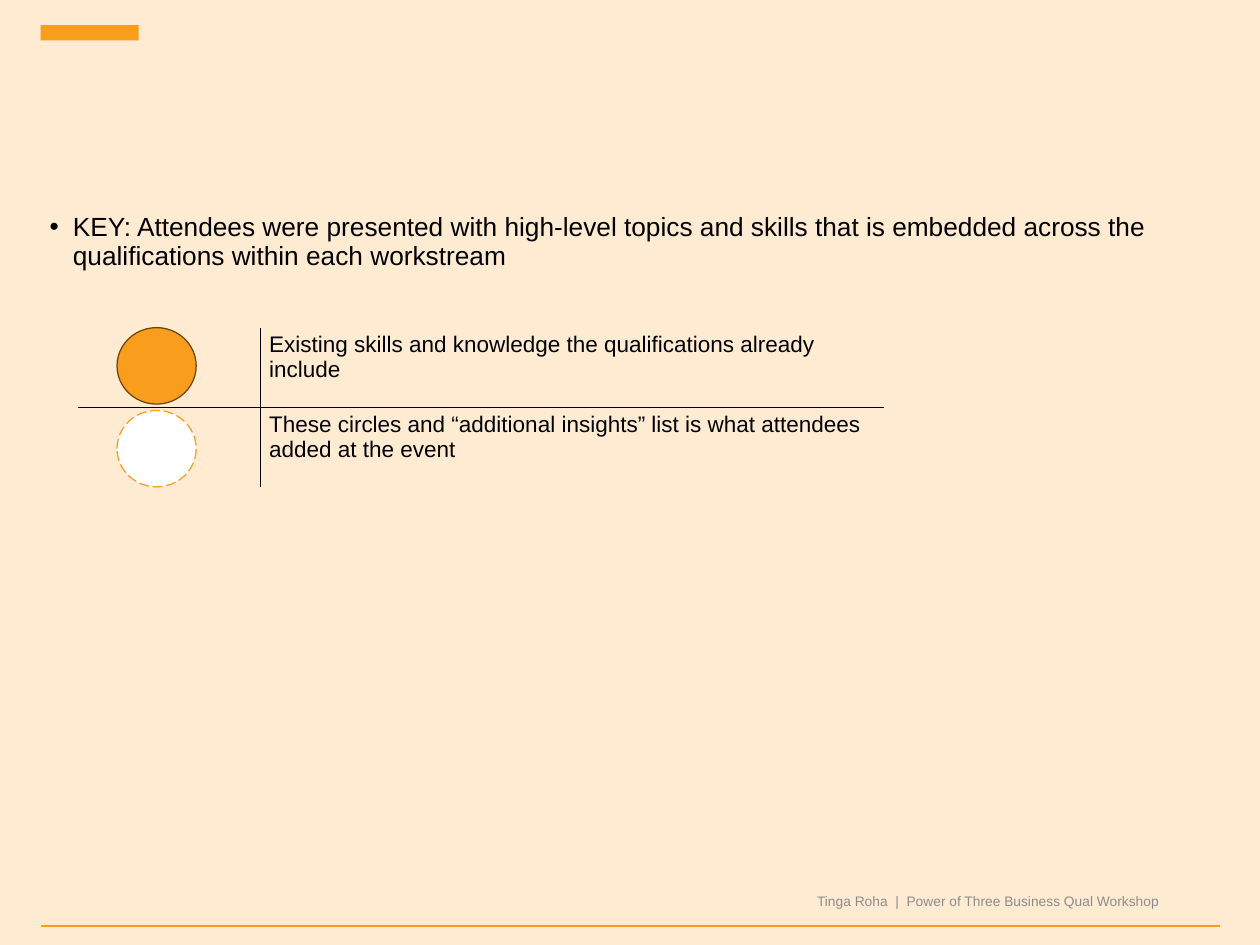
from lxml.etree import SubElement
from pptx import Presentation
from pptx.dml.color import RGBColor
from pptx.enum.dml import MSO_LINE
from pptx.enum.shapes import MSO_CONNECTOR, MSO_SHAPE
from pptx.enum.text import MSO_ANCHOR, MSO_AUTO_SIZE, PP_ALIGN
from pptx.oxml.ns import qn
from pptx.util import Inches, Pt

ORANGE = RGBColor(0xF9, 0x9D, 0x1C)
BROWN = RGBColor(0x6D, 0x45, 0x0C)
CREAM = RGBColor(0xFE, 0xEB, 0xD2)
WHITE = RGBColor(0xFF, 0xFF, 0xFF)
BLACK = RGBColor(0x00, 0x00, 0x00)
GREY = RGBColor(0x8C, 0x8C, 0x8C)
PLAIN_TABLE_STYLE = "{2D5ABB26-0587-4C30-8999-92F81FD0307C}"

KEY_TEXT = (
    "KEY: Attendees were presented with high-level topics and skills that is "
    "embedded across the qualifications within each workstream"
)
LEGEND = [
    "Existing skills and knowledge the qualifications already include",
    "These circles and “additional insights” list is what attendees added at the event",
]
FOOTER = "Tinga Roha  |  Power of Three Business Qual Workshop"


def place(shape, left, top, width, height):
    """Move and size a shape, in inches."""
    shape.left, shape.top = Inches(left), Inches(top)
    shape.width, shape.height = Inches(width), Inches(height)


def format_runs(paragraph, size, color):
    """Give every run of a paragraph its font, size and colour."""
    for run in paragraph.runs:
        run.font.name = "Arial"
        run.font.size = Pt(size)
        run.font.color.rgb = color


def add_filled_shape(slide, kind, left, top, width, height, fill, line=None, dash=None):
    """Add a flat preset shape with an optional outline."""
    shape = slide.shapes.add_shape(
        kind, Inches(left), Inches(top), Inches(width), Inches(height)
    )
    shape.shadow.inherit = False
    shape.fill.solid()
    shape.fill.fore_color.rgb = fill
    if line is None:
        shape.line.fill.background()
    else:
        shape.line.color.rgb = line
        shape.line.width = Pt(1)
        shape.line.dash_style = dash


def add_footer_rule(slide):
    """Add the orange rule along the foot of the slide."""
    rule = slide.shapes.add_connector(
        MSO_CONNECTOR.STRAIGHT, Inches(0.45), Inches(10.29), Inches(13.55), Inches(10.29)
    )
    rule.line.color.rgb = ORANGE
    rule.line.width = Pt(2.25)
    SubElement(rule._element.spPr, qn("a:effectLst"))


def fill_body(slide):
    """Write the bulleted key sentence in the body placeholder."""
    body = slide.placeholders[1]
    place(body, 0.45, 2.33, 13.09, 7.13)
    body.text_frame.text = KEY_TEXT
    body.text_frame.auto_size = MSO_AUTO_SIZE.NONE
    paragraph = body.text_frame.paragraphs[0]
    paragraph.line_spacing = 0.9
    paragraph.space_before = Pt(0)
    properties = paragraph._p.get_or_add_pPr()
    properties.set("marL", str(Inches(0.26)))
    properties.set("indent", str(Inches(-0.26)))
    SubElement(properties, qn("a:buFont"), typeface="Arial")
    SubElement(properties, qn("a:buChar"), char="•")
    format_runs(paragraph, 21, BLACK)


def add_footer(slide):
    """Add the right-aligned footer text."""
    box = slide.shapes.add_textbox(Inches(8.26), Inches(9.73), Inches(4.72), Inches(0.56))
    frame = box.text_frame
    frame.word_wrap = True
    frame.vertical_anchor = MSO_ANCHOR.MIDDLE
    frame.text = FOOTER
    frame.paragraphs[0].alignment = PP_ALIGN.RIGHT
    format_runs(frame.paragraphs[0], 11, GREY)


def set_borders(cell, black_sides):
    """Draw the named sides of a cell in black and hide the others."""
    properties = cell._tc.get_or_add_tcPr()
    for side in "LRTB":
        line = SubElement(properties, qn(f"a:ln{side}"), w=str(Pt(1)))
        if side in black_sides:
            fill = SubElement(line, qn("a:solidFill"))
            SubElement(fill, qn("a:srgbClr"), val=str(BLACK))
        else:
            SubElement(line, qn("a:noFill"))
    cell.fill.background()


def add_legend_table(slide):
    """Add the two-row legend with only its inner lines drawn."""
    frame = slide.shapes.add_table(
        2, 2, Inches(0.87), Inches(3.64), Inches(8.95), Inches(1.77)
    )
    table = frame.table
    table.first_row = table.horz_banding = False
    table._tbl.tblPr.find(qn("a:tableStyleId")).text = PLAIN_TABLE_STYLE
    table.columns[0].width, table.columns[1].width = Inches(2.02), Inches(6.93)
    for row, text in enumerate(LEGEND):
        table.cell(row, 1).text = text
        format_runs(table.cell(row, 1).text_frame.paragraphs[0], 18, BLACK)
        for column in range(2):
            set_borders(table.cell(row, column), "BT"[row] + "RL"[column])


def main():
    """Build and save the slide."""
    presentation = Presentation()
    presentation.slide_width, presentation.slide_height = Inches(14), Inches(10.5)
    slide = presentation.slides.add_slide(presentation.slide_layouts[1])
    slide.background.fill.solid()
    slide.background.fill.fore_color.rgb = CREAM
    title = slide.shapes.title._element
    title.getparent().remove(title)

    add_footer_rule(slide)
    add_filled_shape(slide, MSO_SHAPE.RECTANGLE, 0.45, 0.28, 1.09, 0.17, ORANGE)
    fill_body(slide)
    add_footer(slide)
    add_legend_table(slide)
    circles = [(3.64, ORANGE, BROWN, None), (4.56, WHITE, ORANGE, MSO_LINE.LONG_DASH)]
    for top, fill, line, dash in circles:
        add_filled_shape(slide, MSO_SHAPE.OVAL, 1.3, top, 0.88, 0.85, fill, line, dash)
    presentation.save("out.pptx")


if __name__ == "__main__":
    main()
